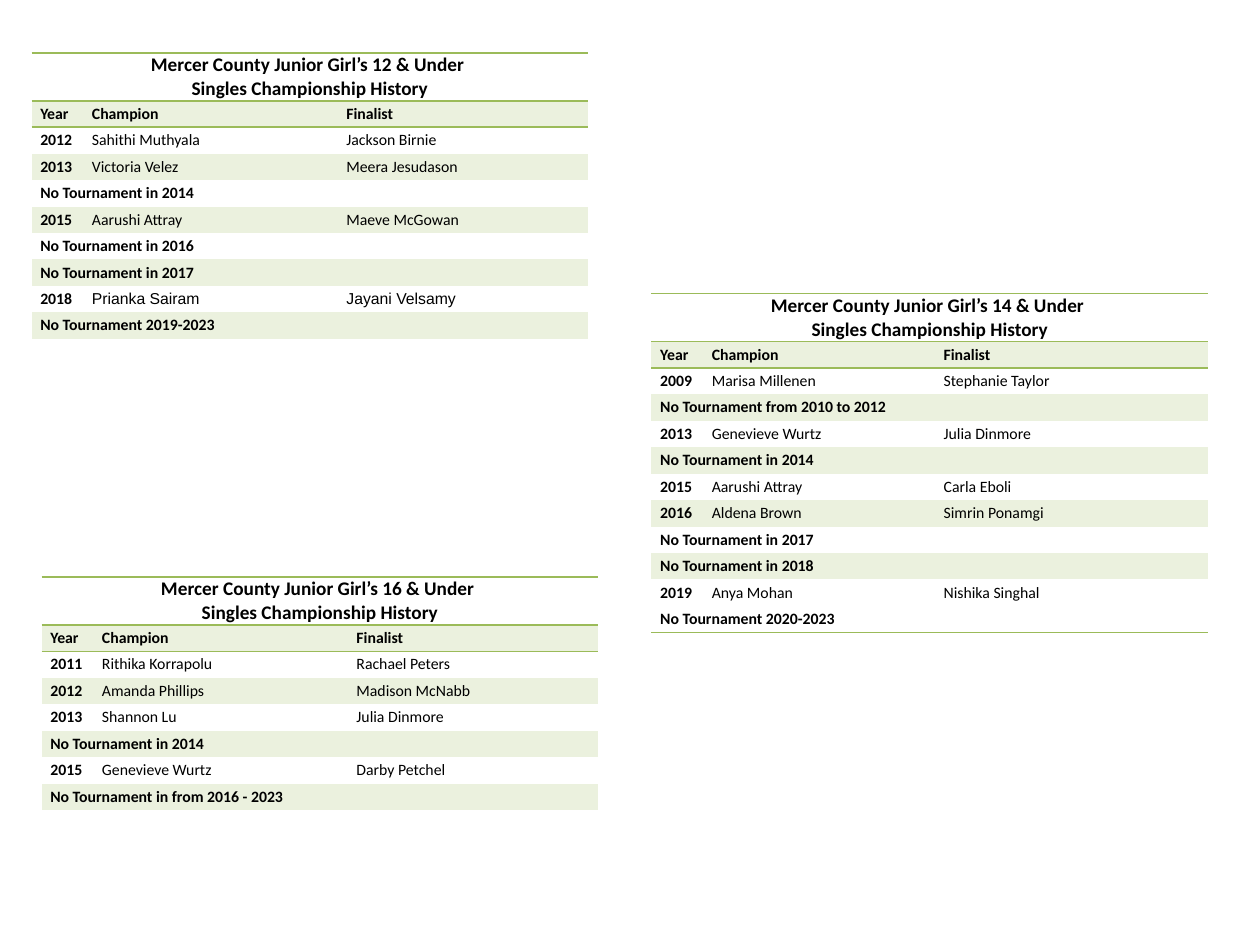
"""Build a slide with three junior girls' singles championship history tables."""
from dataclasses import dataclass

from lxml.etree import SubElement
from pptx import Presentation
from pptx.dml.color import RGBColor
from pptx.enum.text import MSO_ANCHOR, PP_ALIGN
from pptx.oxml.ns import qn
from pptx.util import Inches, Pt

COLORS = {"rule": "9BBB59", "band": "EBF1DE", "text": "000000"}
NO_STYLE = "{2D5ABB26-0587-4C30-8999-92F81FD0307C}"
YEAR_WIDTH, TITLE_HEIGHT, ROW_HEIGHT = 0.41, 0.38, 0.21


@dataclass(frozen=True)
class Season:
    year: str
    champion: str
    finalist: str
    name_font: str = "Calibri"


@dataclass(frozen=True)
class Gap:
    note: str
    span: int = 3


@dataclass(frozen=True)
class History:
    age: int
    left: float
    top: float
    champion_width: float
    finalist_width: float
    rows: tuple[Season | Gap, ...]
    title_anchor: MSO_ANCHOR = MSO_ANCHOR.TOP
    closing_rule: bool = False


HISTORIES = (
    History(12, 0.25, 0.42, 2.02, 1.99, (
        Season("2012", "Sahithi Muthyala", "Jackson Birnie"),
        Season("2013", "Victoria Velez", "Meera Jesudason"),
        Gap("No Tournament in 2014", 2),
        Season("2015", "Aarushi Attray", "Maeve McGowan"),
        Gap("No Tournament in 2016"),
        Gap("No Tournament in 2017"),
        Season("2018", "Prianka Sairam", "Jayani Velsamy", "Arial"),
        Gap("No Tournament 2019-2023"),
    )),
    History(14, 5.17, 2.33, 1.84, 2.17, (
        Season("2009", "Marisa Millenen", "Stephanie Taylor"),
        Gap("No Tournament from 2010 to 2012"),
        Season("2013", "Genevieve Wurtz", "Julia Dinmore"),
        Gap("No Tournament in 2014"),
        Season("2015", "Aarushi Attray", "Carla Eboli"),
        Season("2016", "Aldena Brown", "Simrin Ponamgi"),
        Gap("No Tournament in 2017"),
        Gap("No Tournament in 2018"),
        Season("2019", "Anya Mohan", "Nishika Singhal"),
        Gap("No Tournament 2020-2023", 2),
    ), MSO_ANCHOR.MIDDLE, True),
    History(16, 0.33, 4.58, 2.02, 1.99, (
        Season("2011", "Rithika Korrapolu", "Rachael Peters"),
        Season("2012", "Amanda Phillips", "Madison McNabb"),
        Season("2013", "Shannon Lu", "Julia Dinmore"),
        Gap("No Tournament in 2014", 2),
        Season("2015", "Genevieve Wurtz", "Darby Petchel"),
        Gap("No Tournament in from 2016 - 2023"),
    )),
)


def add_rule(cell, side: str) -> None:
    line = SubElement(cell._tc.get_or_add_tcPr(), qn(f"a:{side}"), w=str(Pt(1)))
    fill = SubElement(line, qn("a:solidFill"))
    SubElement(fill, qn("a:srgbClr"), val=COLORS["rule"])


def format_cell(cell, banded: bool, rules: tuple[str, ...] = ()) -> None:
    for side in rules:
        add_rule(cell, side)
    cell.margin_left = cell.margin_right = Inches(0.07)
    cell.margin_top = cell.margin_bottom = 0
    cell.vertical_anchor = MSO_ANCHOR.MIDDLE
    if banded:
        cell.fill.solid()
        cell.fill.fore_color.rgb = RGBColor.from_string(COLORS["band"])
    else:
        cell.fill.background()


def add_text(paragraph, text: str, size: float = 9, bold: bool = True,
             font: str = "Calibri") -> None:
    run = paragraph.add_run()
    run.text = text
    run.font.name = font
    run.font.size = Pt(size)
    run.font.bold = bold
    run.font.color.rgb = RGBColor.from_string(COLORS["text"])


def fill_title(table, history: History) -> None:
    title = table.cell(0, 0)
    title.merge(table.cell(0, 2))
    title.vertical_anchor = history.title_anchor
    heading = title.text_frame.paragraphs[0]
    heading.alignment = PP_ALIGN.CENTER
    add_text(heading, f"Mercer County Junior Girl’s {history.age} & Under ", 11)
    heading.add_line_break()
    add_text(heading, "Singles Championship History", 11)


def fill_row(table, index: int, entry: Season | Gap) -> None:
    cells = [table.cell(index, column) for column in range(3)]
    if isinstance(entry, Gap):
        cells[0].merge(cells[entry.span - 1])
        add_text(cells[0].text_frame.paragraphs[0], entry.note)
        for cell in cells[1:]:
            SubElement(cell.text_frame.paragraphs[0]._p, qn("a:endParaRPr"), sz="900")
        return
    add_text(cells[0].text_frame.paragraphs[0], entry.year)
    is_header = entry.year == "Year"
    for cell, name in zip(cells[1:], (entry.champion, entry.finalist)):
        add_text(cell.text_frame.paragraphs[0], name, bold=is_header, font=entry.name_font)


def add_history(slide, history: History) -> None:
    entries = (Season("Year", "Champion", "Finalist"), *history.rows)
    widths = (YEAR_WIDTH, history.champion_width, history.finalist_width)
    height = TITLE_HEIGHT + ROW_HEIGHT * len(entries)
    frame = slide.shapes.add_table(
        len(entries) + 1, 3, Inches(history.left), Inches(history.top),
        Inches(sum(widths)), Inches(height))
    frame._element.xpath(".//a:tableStyleId")[0].text = NO_STYLE
    table = frame.table
    table.first_row = table.horz_banding = False
    for column, width in zip(table.columns, widths):
        column.width = Inches(width)

    last = len(entries)
    for index, row in enumerate(table.rows):
        row.height = Inches(ROW_HEIGHT if index else TITLE_HEIGHT)
        closing = history.closing_rule and index == last
        rules = {0: ("lnT", "lnB"), 1: ("lnT",)}.get(index, ("lnB",) if closing else ())
        for cell in row.cells:
            format_cell(cell, index % 2 == 1 and not closing, rules)

    fill_title(table, history)
    for index, entry in enumerate(entries, start=1):
        fill_row(table, index, entry)


def main() -> None:
    presentation = Presentation()
    presentation.slide_width = Inches(10)
    presentation.slide_height = Inches(7.5)
    slide = presentation.slides.add_slide(presentation.slide_layouts[6])
    for history in HISTORIES:
        add_history(slide, history)
    presentation.save("out.pptx")


if __name__ == "__main__":
    main()
